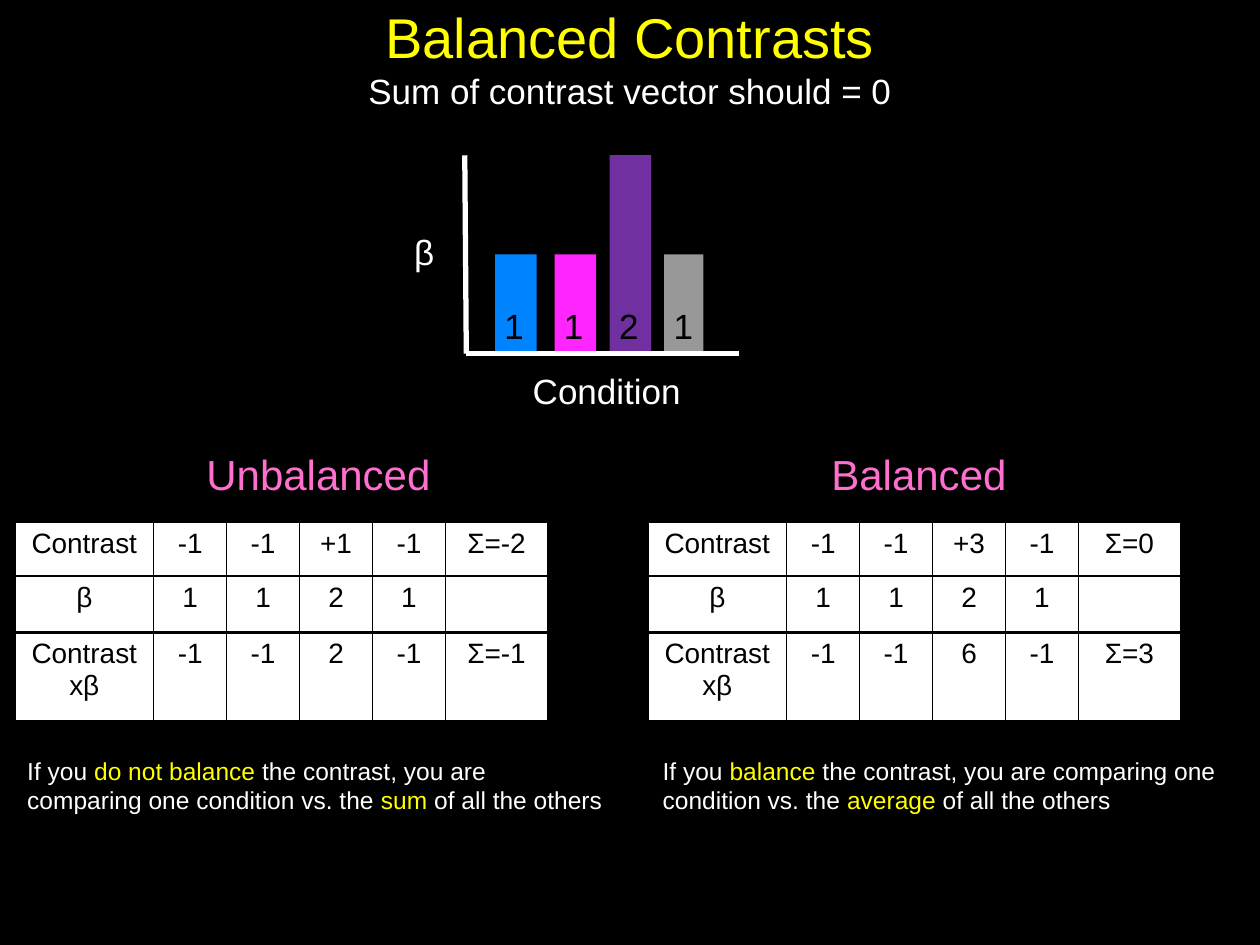
from typing import NamedTuple

from lxml.etree import SubElement
from pptx import Presentation
from pptx.dml.color import RGBColor
from pptx.enum.shapes import MSO_CONNECTOR, MSO_SHAPE
from pptx.enum.text import MSO_ANCHOR, MSO_AUTO_SIZE, PP_ALIGN
from pptx.oxml.ns import qn
from pptx.shapes.autoshape import Shape
from pptx.slide import Slide
from pptx.table import _Cell
from pptx.text.text import Font
from pptx.util import Cm, Pt

BLACK = RGBColor(0x00, 0x00, 0x00)
WHITE = RGBColor(0xFF, 0xFF, 0xFF)
YELLOW = RGBColor(0xFF, 0xFF, 0x00)
PINK = RGBColor(0xFF, 0x6F, 0xCF)
BLUE = RGBColor(0x00, 0x83, 0xFE)
MAGENTA = RGBColor(0xFF, 0x25, 0xFE)
PURPLE = RGBColor(0x70, 0x30, 0xA0)
GREY = RGBColor(0x98, 0x98, 0x98)

BASELINE = 7.13
BAR_UNIT = 2.0
COLUMN_WIDTHS = (2.8, 1.47, 1.47, 1.47, 1.47, 2.06)
ROW_HEIGHTS = (1.09, 1.14, 1.78)


class Bar(NamedTuple):
    left: float
    width: float
    beta: int
    color: RGBColor


class Example(NamedTuple):
    heading: str
    heading_left: float
    heading_width: float
    table_left: float
    rows: tuple[tuple[str, ...], ...]
    note_left: float
    note: tuple[str, ...]  # every second part is highlighted


BARS = (
    Bar(9.98, 0.84, 1, BLUE),
    Bar(11.18, 0.84, 1, MAGENTA),
    Bar(12.29, 0.84, 2, PURPLE),
    Bar(13.39, 0.79, 1, GREY),
)
BETA_ROW = ("β", *(str(bar.beta) for bar in BARS), "")

EXAMPLES = (
    Example(
        "Unbalanced", 3.91, 5.08, 0.3,
        (("Contrast", "-1", "-1", "+1", "-1", "Σ=-2"),
         BETA_ROW,
         ("Contrast\nxβ", "-1", "-1", "2", "-1", "Σ=-1")),
        0.3,
        ("If you ", "do not balance ",
         "the contrast, you are comparing one condition vs. the ",
         "sum", " of all the others"),
    ),
    Example(
        "Balanced", 16.51, 4.09, 13.06,
        (("Contrast", "-1", "-1", "+3", "-1", "Σ=0"),
         BETA_ROW,
         ("Contrast\nxβ", "-1", "-1", "6", "-1", "Σ=3")),
        13.11,
        ("If you ", "balance",
         " the contrast, you are comparing one condition vs. the ",
         "average", " of all the others"),
    ),
)


def style_font(font: Font, size: float, color: RGBColor) -> None:
    font.name = "Arial"
    font.size = Pt(size)
    font.color.rgb = color


def add_text(page: Slide, text: str, left: float, top: float, width: float,
             height: float, size: float, color: RGBColor,
             wrap: bool = False) -> Shape:
    box = page.shapes.add_textbox(Cm(left), Cm(top), Cm(width), Cm(height))
    frame = box.text_frame
    frame.word_wrap = wrap
    frame.auto_size = MSO_AUTO_SIZE.SHAPE_TO_FIT_TEXT
    frame.text = text
    for span in frame.paragraphs[0].runs:
        style_font(span.font, size, color)
    return box


def add_title(page: Slide) -> None:
    title = page.shapes.title
    title.left, title.top, title.width, title.height = (
        Cm(1.9), Cm(-0.1), Cm(21.6), Cm(2.49))
    frame = title.text_frame
    frame.text = "Balanced Contrasts\vSum of contrast vector should = 0"
    frame.vertical_anchor = MSO_ANCHOR.MIDDLE
    frame.auto_size = MSO_AUTO_SIZE.SHAPE_TO_FIT_TEXT
    para = frame.paragraphs[0]
    para.alignment = PP_ALIGN.CENTER
    for span, size, color in zip(para.runs, (32, 20), (YELLOW, WHITE)):
        style_font(span.font, size, color)


def add_bar(page: Slide, bar: Bar) -> None:
    height = bar.beta * BAR_UNIT
    shape = page.shapes.add_shape(
        MSO_SHAPE.RECTANGLE, Cm(bar.left), Cm(BASELINE - height),
        Cm(bar.width), Cm(height))
    shape.shadow.inherit = False
    shape.fill.solid()
    shape.fill.fore_color.rgb = bar.color
    shape.line.fill.background()
    add_text(page, str(bar.beta), bar.left - 0.06, 6.02, 0.91, 1.11, 20, BLACK)


def add_axis(page: Slide, x1: float, y1: float, x2: float, y2: float) -> None:
    axis = page.shapes.add_connector(
        MSO_CONNECTOR.STRAIGHT, Cm(x1), Cm(y1), Cm(x2), Cm(y2))
    axis.line.color.rgb = WHITE
    axis.line.width = Pt(3)
    SubElement(axis._element.spPr, qn("a:effectLst"))


def set_borders(cell: _Cell, top: float, bottom: float) -> None:
    """Draw black borders; must run before the cell gets its fill."""
    properties = cell._tc.get_or_add_tcPr()
    for side, width in (("L", 1), ("R", 1), ("T", top), ("B", bottom)):
        line = SubElement(properties, qn(f"a:ln{side}"), w=str(Pt(width)))
        fill = SubElement(line, qn("a:solidFill"))
        SubElement(fill, qn("a:srgbClr"), val=str(BLACK))


def add_contrast_table(page: Slide, example: Example) -> None:
    table = page.shapes.add_table(
        len(ROW_HEIGHTS), len(COLUMN_WIDTHS), Cm(example.table_left), Cm(10.52),
        Cm(sum(COLUMN_WIDTHS)), Cm(sum(ROW_HEIGHTS))).table
    table.first_row = False
    table.horz_banding = False
    for column, width in zip(table.columns, COLUMN_WIDTHS):
        column.width = Cm(width)
    for row, height in zip(table.rows, ROW_HEIGHTS):
        row.height = Cm(height)
    for row_number, texts in enumerate(example.rows):
        for column_number, text in enumerate(texts):
            cell = table.cell(row_number, column_number)
            set_borders(cell, top=2.25 if row_number == 2 else 1,
                        bottom=2.25 if row_number == 1 else 1)
            cell.fill.solid()
            cell.fill.fore_color.rgb = WHITE
            cell.text_frame.text = text
            for para in cell.text_frame.paragraphs:
                para.alignment = PP_ALIGN.CENTER
                for span in para.runs:
                    style_font(span.font, 16, BLACK)


def add_note(page: Slide, example: Example) -> None:
    box = add_text(page, "", example.note_left, 15.11, 12.19, 1.45, 14, WHITE,
                   wrap=True)
    para = box.text_frame.paragraphs[0]
    for number, part in enumerate(example.note):
        span = para.add_run()
        span.text = part
        style_font(span.font, 14, YELLOW if number % 2 else WHITE)


def main() -> None:
    deck = Presentation()
    deck.slide_width, deck.slide_height = Cm(25.4), Cm(19.05)
    page = deck.slides.add_slide(deck.slide_layouts[5])
    page.background.fill.solid()
    page.background.fill.fore_color.rgb = BLACK

    add_title(page)
    for bar in BARS:
        add_bar(page, bar)
    add_axis(page, 9.37, 3.13, 9.4, BASELINE)
    add_axis(page, 14.9, BASELINE, 9.4, BASELINE)
    add_text(page, "β", 8.1, 4.52, 0.91, 1.11, 20, WHITE)
    add_text(page, "Condition", 10.49, 7.32, 3.53, 1.11, 20, WHITE)
    for example in EXAMPLES:
        add_text(page, example.heading, example.heading_left, 8.92,
                 example.heading_width, 1.27, 24, PINK)
        add_contrast_table(page, example)
        add_note(page, example)
    deck.save("out.pptx")


if __name__ == "__main__":
    main()
